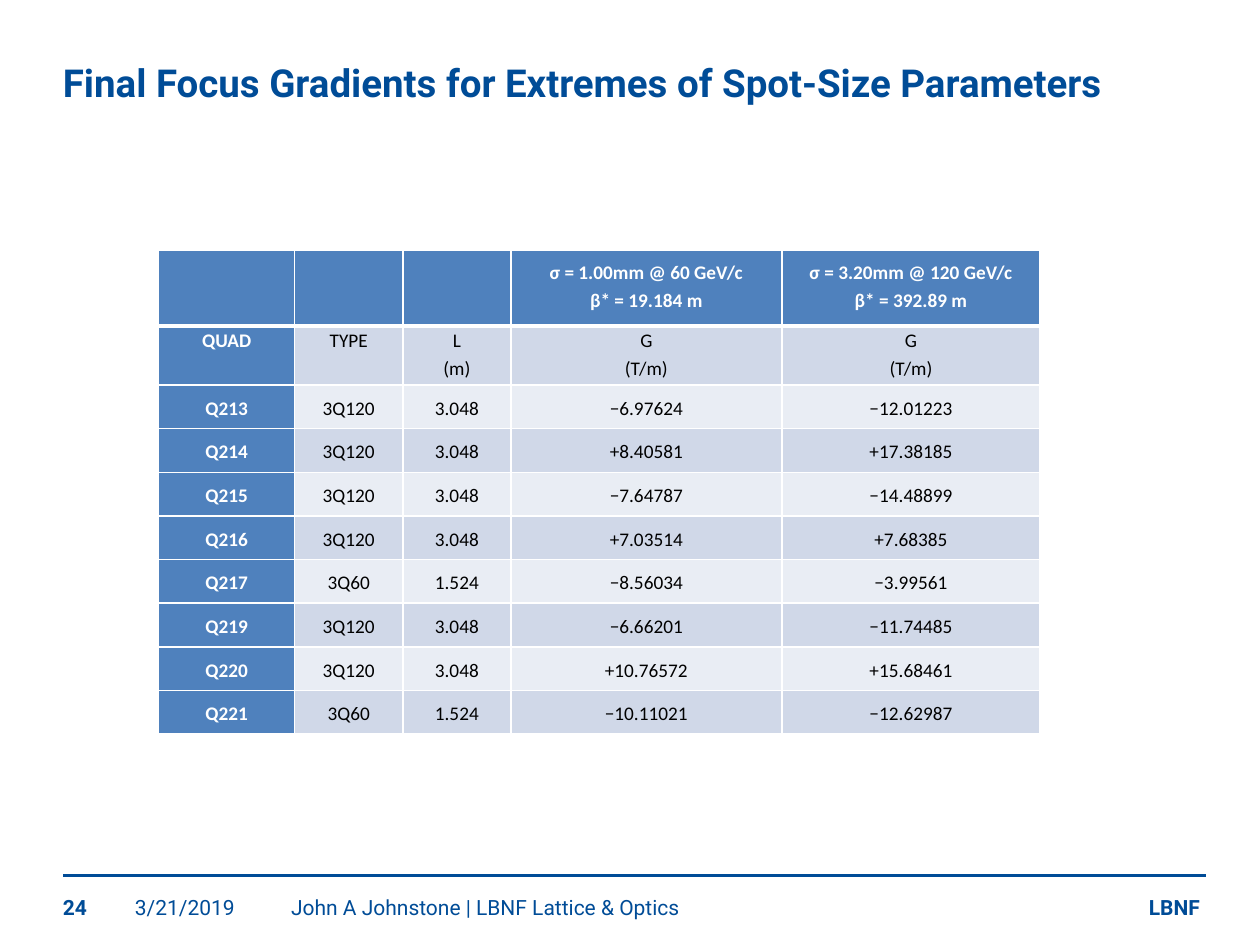
"""Build the slide of final focus gradients for extreme spot sizes."""
from lxml.etree import SubElement
from pptx import Presentation
from pptx.dml.color import RGBColor
from pptx.enum.shapes import MSO_CONNECTOR
from pptx.enum.text import MSO_ANCHOR, PP_ALIGN
from pptx.oxml.ns import qn
from pptx.util import Cm, Pt

NAVY = RGBColor(0x00, 0x4C, 0x97)
BLUE = RGBColor(0x4F, 0x81, 0xBD)
DARK_BAND = RGBColor(0xD0, 0xD8, 0xE8)
LIGHT_BAND = RGBColor(0xE9, 0xED, 0xF4)
WHITE = RGBColor(0xFF, 0xFF, 0xFF)
BLACK = RGBColor(0x00, 0x00, 0x00)

COLUMN_WIDTHS = [2.74, 2.18, 2.18, 5.46, 5.21]
HEADER_HEIGHT, UNITS_HEIGHT, QUAD_HEIGHT = 1.52, 1.19, 0.88
ROWS = [
    ["", "", "", "σ = 1.00mm @ 60 GeV/c\nβ* = 19.184 m", "σ = 3.20mm @ 120 GeV/c\nβ* = 392.89 m"],
    ["QUAD", "TYPE", "L\n(m)", "G\n(T/m)", "G\n(T/m)"],
    ["Q213", "3Q120", "3.048", "−6.97624", "−12.01223"],
    ["Q214", "3Q120", "3.048", "+8.40581", "+17.38185"],
    ["Q215", "3Q120", "3.048", "−7.64787", "−14.48899"],
    ["Q216", "3Q120", "3.048", "+7.03514", "+7.68385"],
    ["Q217", "3Q60", "1.524", "−8.56034", "−3.99561"],
    ["Q219", "3Q120", "3.048", "−6.66201", "−11.74485"],
    ["Q220", "3Q120", "3.048", "+10.76572", "+15.68461"],
    ["Q221", "3Q60", "1.524", "−10.11021", "−12.62987"],
]
TEXTS = [
    ("Final Focus Gradients for Extremes of Spot-Size Parameters", 1.27, 1.19, 23.04, 1.57, 22, True, MSO_ANCHOR.TOP),
    ("24", 1.27, 18.03, 1.45, 0.51, 12, True, MSO_ANCHOR.BOTTOM),
    ("3/21/2019", 2.72, 18.03, 3.15, 0.51, 12, False, MSO_ANCHOR.BOTTOM),
    ("John A Johnstone | LBNF Lattice & Optics", 5.87, 18.03, 15.6, 0.51, 12, False, MSO_ANCHOR.BOTTOM),
    ("LBNF", 23.16, 18.01, 1.17, 0.53, 12, True, MSO_ANCHOR.BOTTOM),
]


def add_span(para, text, font_name, size, color, bold):
    span = para.add_run()
    span.text = text
    span.font.name = font_name
    span.font.size = Pt(size)
    span.font.color.rgb = color
    span.font.bold = bold


def add_border(cell, side, points):
    border = SubElement(cell._tc.get_or_add_tcPr(), qn(f"a:ln{side}"), w=str(Pt(points)))
    fill = SubElement(border, qn("a:solidFill"))
    SubElement(fill, qn("a:srgbClr"), val=str(WHITE))


deck = Presentation()
deck.slide_width = Cm(25.4)
deck.slide_height = Cm(19.05)
page = deck.slides.add_slide(deck.slide_layouts[6])

rule = page.shapes.add_connector(MSO_CONNECTOR.STRAIGHT, Cm(1.27), Cm(17.65), Cm(24.31), Cm(17.65))
rule.line.color.rgb = NAVY
rule.line.width = Pt(2)
SubElement(rule._element.spPr, qn("a:effectLst"))

for text, left, top, width, height, size, bold, anchor in TEXTS:
    box = page.shapes.add_textbox(Cm(left), Cm(top), Cm(width), Cm(height))
    frame = box.text_frame
    frame.word_wrap = True
    frame.vertical_anchor = anchor
    frame.margin_left = frame.margin_right = frame.margin_top = frame.margin_bottom = 0
    add_span(frame.paragraphs[0], text, "Roboto", size, NAVY, bold)

row_heights = [HEADER_HEIGHT, UNITS_HEIGHT] + [QUAD_HEIGHT] * (len(ROWS) - 2)
table = page.shapes.add_table(
    len(ROWS), len(COLUMN_WIDTHS), Cm(3.2), Cm(5.05), Cm(sum(COLUMN_WIDTHS)), Cm(sum(row_heights))
).table
table.first_col = True
for column, width in zip(table.columns, COLUMN_WIDTHS):
    column.width = Cm(width)

for row_index, texts in enumerate(ROWS):
    table.rows[row_index].height = Cm(row_heights[row_index])
    band = DARK_BAND if row_index % 2 else LIGHT_BAND
    for column_index, text in enumerate(texts):
        cell = table.cell(row_index, column_index)
        heading = row_index == 0 or column_index == 0
        add_border(cell, "L", 1)
        add_border(cell, "R", 1)
        add_border(cell, "T", 3 if row_index == 1 else 1)
        add_border(cell, "B", 3 if row_index == 0 else 1)
        cell.fill.solid()
        cell.fill.fore_color.rgb = BLUE if heading else band
        cell.margin_left = cell.margin_right = Cm(0.18)
        cell.margin_top = Cm(0.15) if row_index == 0 else 0
        cell.margin_bottom = 0
        cell.vertical_anchor = MSO_ANCHOR.TOP if row_index < 2 else MSO_ANCHOR.MIDDLE
        if not text:
            continue
        for line_index, line in enumerate(text.split("\n")):
            para = cell.text_frame.add_paragraph() if line_index else cell.text_frame.paragraphs[0]
            para.alignment = PP_ALIGN.CENTER
            para.line_spacing = 1.15
            add_span(para, line, "Calibri", 11, WHITE if heading else BLACK, heading)

deck.save("out.pptx")
